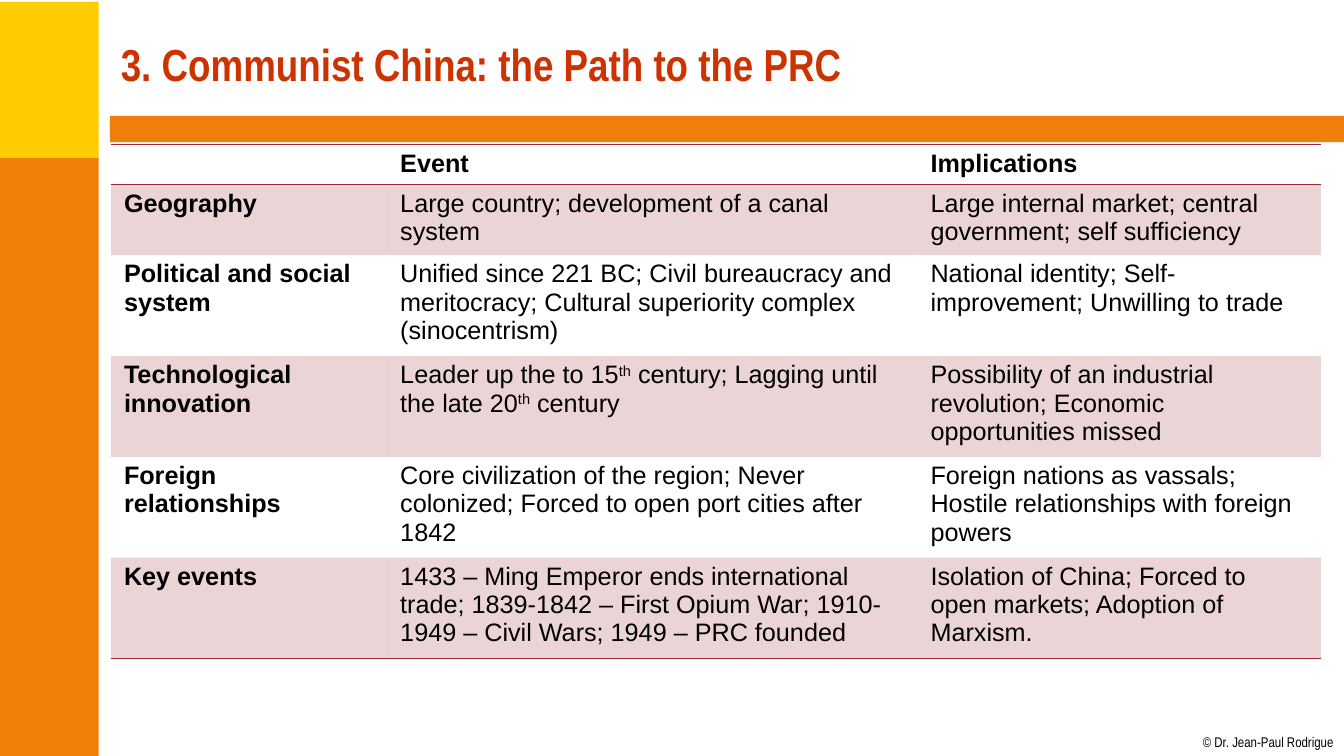
from pptx import Presentation
from pptx.dml.color import RGBColor as Rgb
from pptx.enum.shapes import MSO_SHAPE as Kind
from pptx.enum.text import MSO_ANCHOR as Anchor
from pptx.oxml import parse_xml
from pptx.oxml.ns import nsdecls, qn
from pptx.util import Inches, Pt

# Grid: one column or row is one inch
UNIT = Inches(1)
WIDE, HIGH = 13.33, 7.5
EDGE = 1.1

YELLOW = Rgb(0xFF, 0xCC, 0x00)
ORANGE = Rgb(0xF0, 0x7F, 0x09)
RED = Rgb(0xCC, 0x33, 0x00)
WINE = Rgb(0x9F, 0x29, 0x36)
BLACK = Rgb(0, 0, 0)

PLAIN = "{2D5ABB26-0587-4C30-8999-92F81FD0307C}"
COLS = [2.74, 5.26, 4]
LINE = 0.28  # height of one line of table text
PAD = 0.1
# A caret pair encloses superscript text; the number counts lines
ROWS = [
    (1, "", "Event", "Implications"),
    (2, "Geography", "Large country; development of a canal system",
     "Large internal market; central government; self sufficiency"),
    (3, "Political and social system",
     "Unified since 221 BC; Civil bureaucracy and meritocracy; "
     "Cultural superiority complex (sinocentrism)",
     "National identity; Self-improvement; Unwilling to trade"),
    (3, "Technological innovation",
     "Leader up the to 15^th^ century; Lagging until the late 20^th^ century",
     "Possibility of an industrial revolution; Economic opportunities missed"),
    (3, "Foreign relationships",
     "Core civilization of the region; Never colonized; "
     "Forced to open port cities after 1842",
     "Foreign nations as vassals; Hostile relationships with foreign powers"),
    (3, "Key events",
     "1433 – Ming Emperor ends international trade; 1839-1842 – First Opium "
     "War; 1910-1949 – Civil Wars; 1949 – PRC founded",
     "Isolation of China; Forced to open markets; Adoption of Marxism."),
]


def scale(box):
    return [round(n * UNIT) for n in box]


def style(run, size, color, face, bold=False):
    font = run.font
    font.size, font.name, font.bold = Pt(size), face, bold
    font.color.rgb = color


def add_bar(slide, box, color):
    bar = slide.shapes.add_shape(Kind.RECTANGLE, *scale(box))
    bar.shadow.inherit = False
    bar.fill.solid()
    bar.fill.fore_color.rgb = color
    bar.line.fill.background()


def add_frame(slide, box):
    """Side column in two colours and the rule under the title."""
    left, top, wide, high = box
    split = 1.57
    add_bar(slide, (left - 0.02, top + 0.02, 1, split), YELLOW)
    add_bar(slide, (left - 0.02, top + split, 1, high - split), ORANGE)
    add_bar(slide, (left + 1.09, top + 1.15, wide - 1.09, 0.26), ORANGE)


def add_label(slide, box, text, size, color, bold=False, inset=(0, 0), wrap=True):
    frame = slide.shapes.add_textbox(*scale(box)).text_frame
    frame.word_wrap = wrap
    frame.vertical_anchor = Anchor.MIDDLE
    frame.margin_left = frame.margin_right = Inches(inset[0])
    frame.margin_top = frame.margin_bottom = Inches(inset[1])
    frame.text = text
    style(frame.paragraphs[0].runs[0], size, color, "Arial Narrow", bold)


def add_rule(cell, side):
    cell._tc.get_or_add_tcPr().insert(0, parse_xml(
        f'<a:{side} {nsdecls("a")} w="{Pt(1)}"><a:solidFill>'
        f'<a:srgbClr val="{WINE}"/></a:solidFill></a:{side}>'))


def fill_cell(cell, text, bold, shade):
    cell.margin_left = cell.margin_right = Inches(0.13)
    cell.margin_top = cell.margin_bottom = Inches(PAD / 2)
    para = cell.text_frame.paragraphs[0]
    for n, part in enumerate(text.split("^")):
        if not part:
            continue
        run = para.add_run()
        run.text = part
        style(run, 18, BLACK, "Arial", bold)
        if n % 2:
            run._r.get_or_add_rPr().set("baseline", "30000")
    if shade:
        cell.fill.solid()
        cell.fill.fore_color.rgb = WINE
        tint = cell._tc.tcPr.find(".//" + qn("a:srgbClr"))
        tint.append(parse_xml(f'<a:alpha {nsdecls("a")} val="20000"/>'))
    else:
        cell.fill.background()


def add_grid(slide, box):
    """Table with ruled head, tinted odd rows and a closing rule."""
    table = slide.shapes.add_table(len(ROWS), len(COLS), *scale(box)).table
    table._tbl.tblPr.find(qn("a:tableStyleId")).text = PLAIN
    table.horz_banding = False
    for col, share in zip(table.columns, COLS):
        col.width = round(box[2] * share / sum(COLS) * UNIT)
    last = len(ROWS) - 1
    for r, (lines, *texts) in enumerate(ROWS):
        table.rows[r].height = Inches(lines * LINE + PAD)
        for c, text in enumerate(texts):
            cell = table.cell(r, c)
            fill_cell(cell, text, r == 0 or c == 0, r % 2 == 1)
            if r in (0, last):
                add_rule(cell, "lnB")
            if r == 0:
                add_rule(cell, "lnT")


def main():
    deck = Presentation()
    deck.slide_width, deck.slide_height = scale((WIDE, HIGH))
    slide = deck.slides.add_slide(deck.slide_layouts[6])
    add_frame(slide, (0, 0, WIDE, HIGH))
    # Credit line
    add_label(slide, (11.93, 7.28, 1.31, 0.17), "© Dr. Jean-Paul Rodrigue",
              10, BLACK, wrap=False)
    # Title
    add_label(slide, (EDGE, 0.11, 12, 1.04),
              "3. Communist China: the Path to the PRC", 32, RED, True, (0.1, 0.05))
    add_grid(slide, (EDGE, 1.43, 12, 4.8))
    deck.save("out.pptx")


if __name__ == "__main__":
    main()
